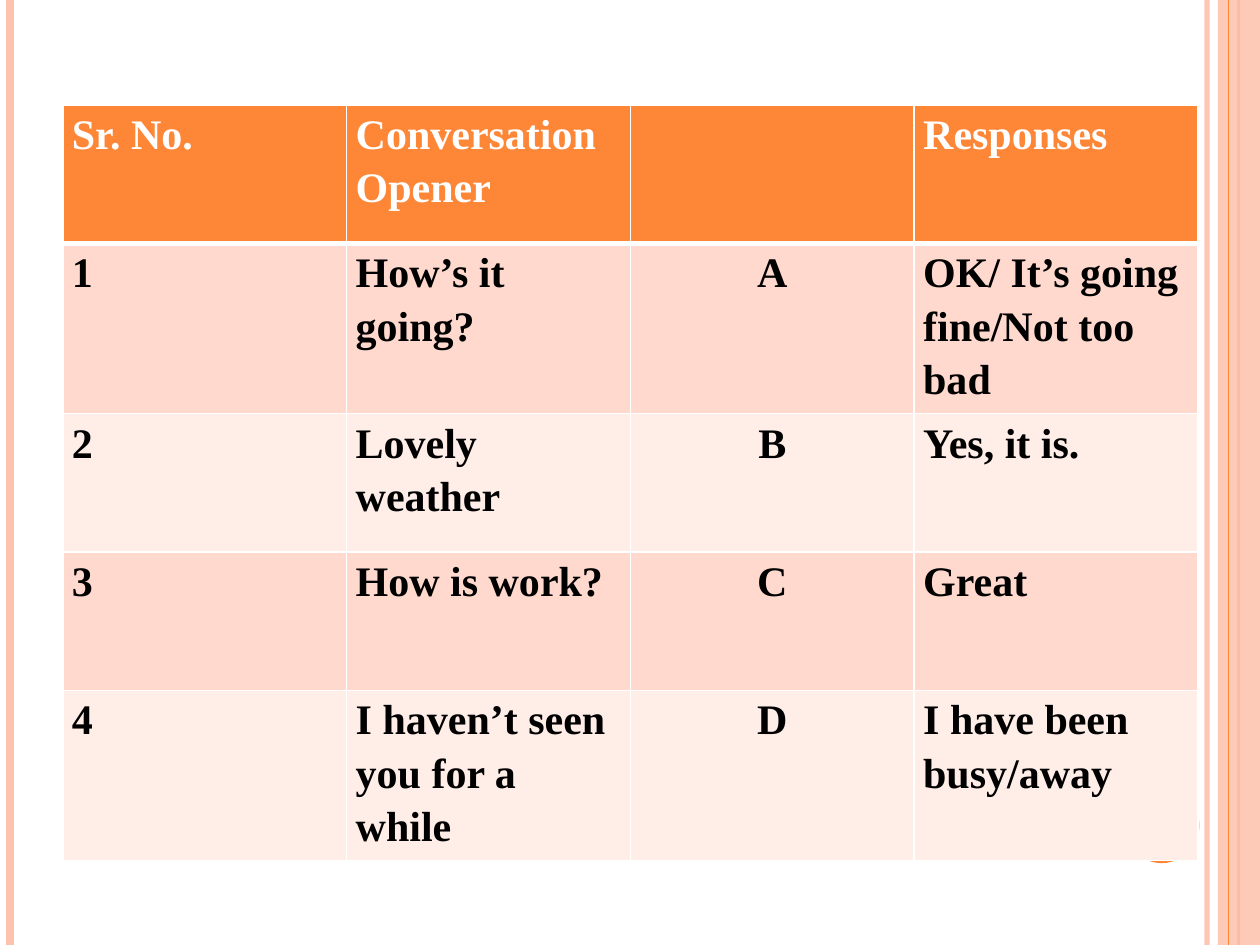
from dataclasses import dataclass

import lxml.etree
import pptx
import pptx.dml.color
import pptx.enum.shapes
import pptx.enum.text
import pptx.oxml.ns
import pptx.util

Cm = pptx.util.Cm
Pt = pptx.util.Pt
qn = pptx.oxml.ns.qn


@dataclass(frozen=True)
class Theme:
    orange: str = "FE8637"
    peach: str = "FEC3AE"
    band_dark: str = "FFD9CE"
    band_light: str = "FFEDE8"
    white: str = "FFFFFF"
    black: str = "000000"
    font: str = "Times New Roman"
    text_size: int = 24
    border: int = 1
    header_border: int = 3


THEME = Theme()
HEIGHT = 19.05
COLUMN_WIDTH = 5.72
ROW_HEIGHTS = [2.79, 3.43, 2.79, 2.79, 3.43]
ROWS = [
    ["Sr. No.", "Conversation Opener", "", "Responses"],
    ["1", "How’s it going?", "A", "OK/ It’s going fine/Not too bad"],
    ["2", "Lovely weather", "B", "Yes, it is."],
    ["3", "How is work?", "C", "Great"],
    ["4", "I haven’t seen you for a while", "D", "I have been busy/away"],
]


def rgb(color):
    return pptx.dml.color.RGBColor.from_string(color)


def set_alpha(properties, percent):
    color = next(properties.iter(qn("a:srgbClr")))
    lxml.etree.SubElement(color, qn("a:alpha"), val=str(percent * 1000))


def add_stripe(page, left, color, width, opacity=100):
    stripe = page.shapes.add_connector(
        pptx.enum.shapes.MSO_CONNECTOR.STRAIGHT, Cm(left), 0, Cm(left), Cm(HEIGHT))
    stripe.line.color.rgb = rgb(color)
    stripe.line.width = Pt(width)
    properties = stripe.line._get_or_add_ln().getparent()
    lxml.etree.SubElement(properties, qn("a:effectLst"))
    if opacity < 100:
        set_alpha(properties, opacity)


def add_block(page, kind, left, top, width, height, color, opacity=100):
    block = page.shapes.add_shape(kind, Cm(left), Cm(top), Cm(width), Cm(height))
    block.shadow.inherit = False
    block.fill.solid()
    block.fill.fore_color.rgb = rgb(color)
    block.line.fill.background()
    if opacity < 100:
        set_alpha(block._element.spPr, opacity)


def set_borders(cell, top, bottom):
    properties = cell._tc.get_or_add_tcPr()
    widths = {"lnL": THEME.border, "lnR": THEME.border, "lnT": top, "lnB": bottom}
    for position, (side, width) in enumerate(widths.items()):
        line = lxml.etree.Element(qn("a:" + side), w=str(Pt(width)))
        fill = lxml.etree.SubElement(line, qn("a:solidFill"))
        lxml.etree.SubElement(fill, qn("a:srgbClr"), val=THEME.white)
        properties.insert(position, line)


def fill_cell(cell, text, fill, color, centered):
    cell.fill.solid()
    cell.fill.fore_color.rgb = rgb(fill)
    cell.margin_left = cell.margin_right = Cm(0.18)
    cell.margin_top = cell.margin_bottom = 0
    if not text:
        return
    para = cell.text_frame.paragraphs[0]
    para.line_spacing = 1.15
    if centered:
        para.alignment = pptx.enum.text.PP_ALIGN.CENTER
    span = para.add_run()
    span.text = text
    span.font.name = THEME.font
    span.font.size = Pt(THEME.text_size)
    span.font.bold = True
    span.font.color.rgb = rgb(color)


def add_conversation_table(page):
    table = page.shapes.add_table(
        len(ROWS), len(ROWS[0]), Cm(1.27), Cm(2.12),
        Cm(COLUMN_WIDTH * len(ROWS[0])), Cm(sum(ROW_HEIGHTS))).table
    for column in table.columns:
        column.width = Cm(COLUMN_WIDTH)
    for row, height in zip(table.rows, ROW_HEIGHTS):
        row.height = Cm(height)
    for row_index, texts in enumerate(ROWS):
        header = row_index == 0
        band = THEME.band_dark if row_index % 2 else THEME.band_light
        fill = THEME.orange if header else band
        color = THEME.white if header else THEME.black
        top = THEME.header_border if row_index == 1 else THEME.border
        bottom = THEME.header_border if header else THEME.border
        for column_index, text in enumerate(texts):
            cell = table.cell(row_index, column_index)
            fill_cell(cell, text, fill, color, column_index == 2)
            set_borders(cell, top, bottom)


def main():
    deck = pptx.Presentation()
    deck.slide_width, deck.slide_height = Cm(25.4), Cm(HEIGHT)
    page = deck.slides.add_slide(deck.slide_layouts[6])
    shapes = pptx.enum.shapes.MSO_SHAPE
    add_stripe(page, 24.33, THEME.peach, 3, 93)
    add_stripe(page, 0.2, THEME.peach, 4.5)
    add_stripe(page, 24.97, THEME.orange, 1.5)
    add_block(page, shapes.RECTANGLE, 24.55, 0, 0.85, HEIGHT, THEME.peach, 87)
    add_stripe(page, 24.77, THEME.orange, 0.75)
    add_block(page, shapes.OVAL, 22.66, 15.88, 1.52, 1.52, THEME.orange)
    add_conversation_table(page)
    deck.save("out.pptx")


if __name__ == "__main__":
    main()
